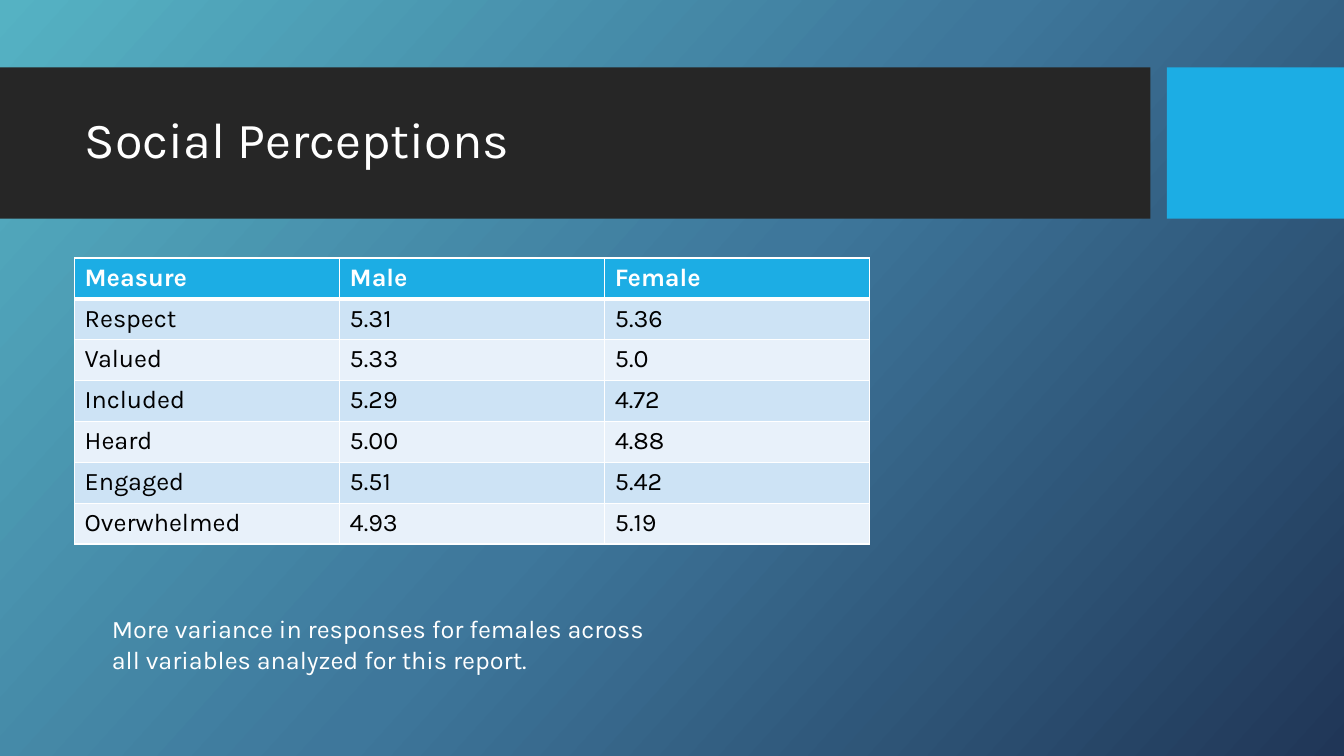
from copy import deepcopy

from lxml.etree import SubElement
from pptx import Presentation
from pptx.dml.color import RGBColor
from pptx.enum.shapes import MSO_SHAPE as Shape
from pptx.enum.text import MSO_ANCHOR as Anchor, MSO_AUTO_SIZE as AutoSize, PP_ALIGN as Align
from pptx.oxml.ns import qn
from pptx.util import Cm, Pt

FONT = "Karla"
WHITE = RGBColor(0xFF, 0xFF, 0xFF)
BLACK = RGBColor(0x00, 0x00, 0x00)
CHARCOAL = RGBColor(0x26, 0x26, 0x26)
SKY = RGBColor(0x1C, 0xAD, 0xE4)
ROW_TINTS = (RGBColor(0xCD, 0xE3, 0xF5), RGBColor(0xE8, 0xF1, 0xFA))
BACKDROP = (
    RGBColor(0x55, 0xB2, 0xC3),
    RGBColor(0x3E, 0x77, 0x9B),
    RGBColor(0x20, 0x36, 0x57),
)

SCORES = (
    ("Measure", "Male", "Female"),
    ("Respect", "5.31", "5.36"),
    ("Valued", "5.33", "5.0"),
    ("Included", "5.29", "4.72"),
    ("Heard", "5.00", "4.88"),
    ("Engaged", "5.51", "5.42"),
    ("Overwhelmed", "4.93", "5.19"),
)


def write(frame, text, size=18, color=WHITE, bold=False, spacing=None):
    frame.word_wrap = True
    paragraph = frame.paragraphs[0]
    paragraph.alignment = Align.LEFT
    paragraph.line_spacing = spacing
    run = paragraph.add_run()
    run.text = text
    run.font.name = FONT
    run.font.size = Pt(size)
    run.font.bold = bold
    run.font.color.rgb = color


def paint_backdrop(slide):
    fill = slide.background.fill
    fill.gradient()
    fill.gradient_angle = 360 - 42
    # The default gradient has two stops; a third is needed
    first_stop = next(slide.element.iter(qn("a:gs")))
    first_stop.addnext(deepcopy(first_stop))
    for stop, color, position in zip(fill.gradient_stops, BACKDROP, (0, 0.5, 1)):
        stop.color.rgb = color
        stop.position = position


def add_band(slide, left, width, color):
    band = slide.shapes.add_shape(Shape.RECTANGLE, left, Cm(1.7), width, Cm(3.81))
    band.shadow.inherit = False
    band.fill.solid()
    band.fill.fore_color.rgb = color
    band.line.fill.background()


def place_title(slide, text):
    title = slide.shapes.title
    slide.shapes.element.append(title.element)  # in front of the bands
    title.left, title.top, title.width, title.height = Cm(1.88), Cm(2.08), Cm(26.7), Cm(3)
    title.text_frame.auto_size = AutoSize.NONE
    title.text_frame.vertical_anchor = Anchor.MIDDLE
    write(title.text_frame, text, size=36, spacing=0.9)


def set_borders(cell, top, bottom):
    properties = cell._tc.get_or_add_tcPr()
    for side, width in (("L", 1), ("R", 1), ("T", top), ("B", bottom)):
        line = SubElement(properties, qn(f"a:ln{side}"), w=str(Pt(width)))
        fill = SubElement(line, qn("a:solidFill"))
        SubElement(fill, qn("a:srgbClr"), val=str(WHITE))


def add_score_table(slide):
    column_width, row_height = Cm(6.68), Cm(1.03)
    row_count, column_count = len(SCORES), len(SCORES[0])
    table = slide.shapes.add_table(
        row_count, column_count, Cm(1.88), Cm(6.5),
        column_width * column_count, row_height * row_count,
    ).table
    for column in table.columns:
        column.width = column_width
    for index, scores in enumerate(SCORES):
        table.rows[index].height = row_height
        header = index == 0
        for cell, text in zip(table.rows[index].cells, scores):
            # A thick rule divides the header from the scores
            set_borders(cell, top=3 if index == 1 else 1, bottom=3 if header else 1)
            cell.fill.solid()
            cell.fill.fore_color.rgb = SKY if header else ROW_TINTS[(index - 1) % 2]
            write(cell.text_frame, text, color=WHITE if header else BLACK, bold=header)


def add_remark(slide, text):
    remark = slide.shapes.add_textbox(Cm(2.57), Cm(15.34), Cm(14.6), Cm(1.8))
    write(remark.text_frame, text)


def main():
    deck = Presentation()
    deck.slide_width, deck.slide_height = Cm(33.87), Cm(19.05)
    slide = deck.slides.add_slide(deck.slide_layouts[5])

    # Background and title bands
    paint_backdrop(slide)
    add_band(slide, Cm(0), Cm(28.99), CHARCOAL)
    add_band(slide, Cm(29.41), Cm(4.46), SKY)

    # Content
    place_title(slide, "Social Perceptions")
    add_score_table(slide)
    add_remark(
        slide,
        "More variance in responses for females across all variables analyzed for this report.",
    )
    deck.save("out.pptx")


if __name__ == "__main__":
    main()
